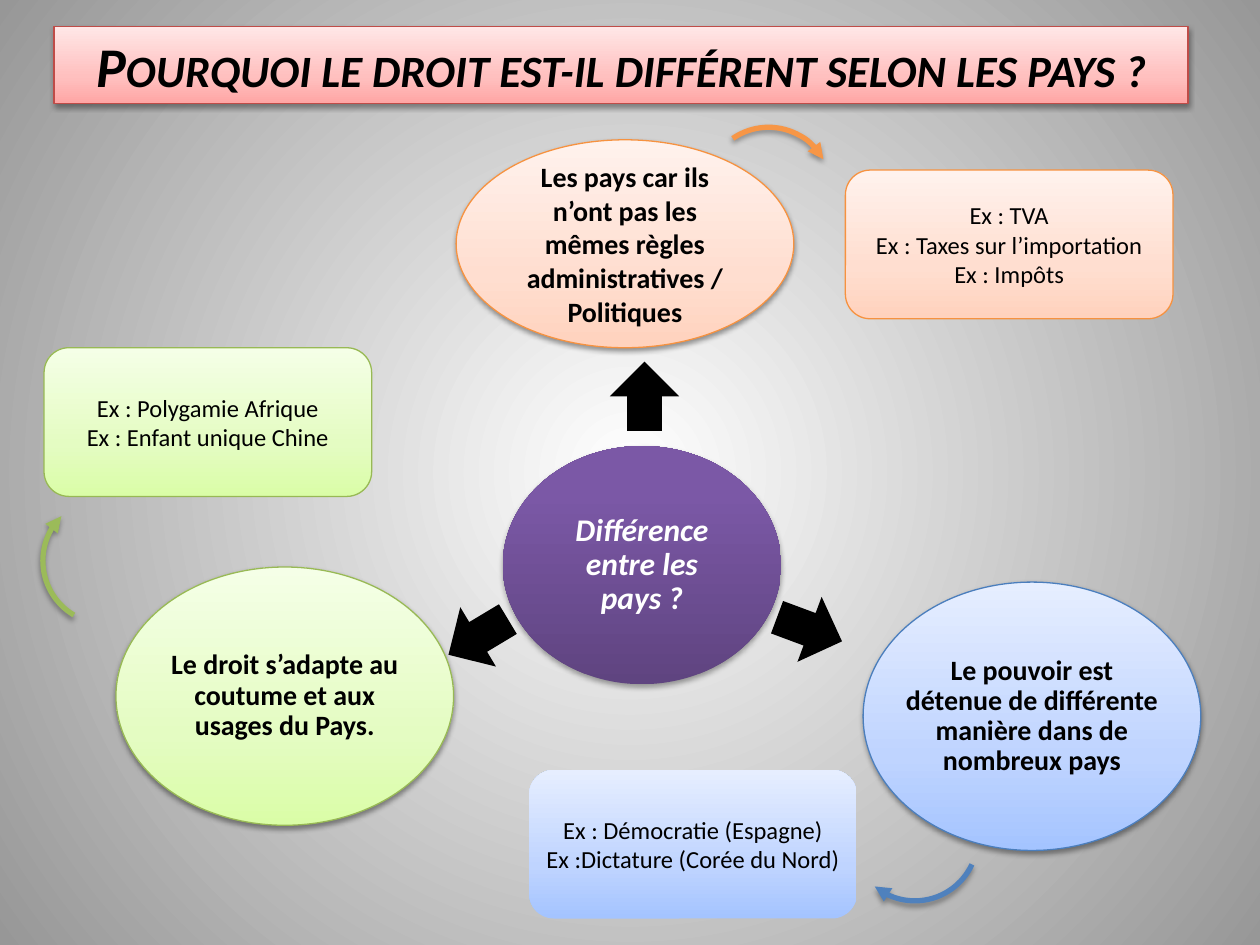
from lxml.etree import SubElement
from pptx import Presentation
from pptx.dml.color import RGBColor
from pptx.enum.shapes import MSO_SHAPE as Shape
from pptx.enum.text import MSO_ANCHOR, PP_ALIGN
from pptx.oxml.ns import qn
from pptx.util import Emu, Inches, Pt

BLACK = RGBColor(0x00, 0x00, 0x00)
WHITE = RGBColor(0xFF, 0xFF, 0xFF)
RED_LINE = RGBColor(0xBF, 0x4C, 0x48)
ORANGE_LINE = RGBColor(0xF6, 0x92, 0x40)
GREEN_LINE = RGBColor(0x98, 0xB9, 0x55)
BLUE_LINE = RGBColor(0x4B, 0x7E, 0xBC)
ORANGE = RGBColor(0xF7, 0x96, 0x46)
GREEN = RGBColor(0x9B, 0xBB, 0x59)
BLUE = RGBColor(0x4F, 0x81, 0xBD)

# Gradients: (position in percent, colour), from bottom to top
def pastel(*colors):
    return list(zip((0, 35, 100), map(RGBColor.from_string, colors)))


RED_FADE = pastel("FFA6A5", "FFC0BF", "FFE7E7")
ORANGE_FADE = pastel("FFD2BD", "FFDED0", "FFF2ED")
GREEN_FADE = pastel("DAFDA7", "E4FCC2", "F5FFE7")
BLUE_FADE = pastel("A4C4FF", "BFD4FF", "E6EEFF")
PURPLE_FADE = [(0, RGBColor(0x5F, 0x44, 0x80)), (80, RGBColor(0x7B, 0x58, 0xA6)),
               (100, RGBColor(0x7C, 0x57, 0xA8))]
BACKDROP = [(0, WHITE), (100, RGBColor(0x97, 0x97, 0x97))]

# Shadows: opacity in percent, distance in points
SOFT, STRONG = (38, 1.6), (35, 1.8)

TITLE = "Pourquoi le droit est-il différent selon les pays ?"
CENTRE = "Différence entre les pays ?"

# Reasons: text, box, fade, line, text margins from the box (x, y), line spacing
REASONS = [
    ("Le droit s’adapte au coutume et aux usages du Pays.",
     (0.92, 4.5, 2.68, 2.05), GREEN_FADE, GREEN_LINE, (0.3, 0.24), 0.9),
    ("Le pouvoir est détenue de différente manière dans de nombreux pays",
     (6.85, 4.62, 2.68, 2.13), BLUE_FADE, BLUE_LINE, (0.31, 0.3), 0.9),
    ("Les pays car ils n’ont pas les mêmes règles administratives / Politiques",
     (3.62, 1.11, 2.68, 1.65), ORANGE_FADE, ORANGE_LINE, (0.49, 0.29), 1.0),
]

# Examples: lines, left, top, fade, line
EXAMPLE_SIZE = (2.6, 1.18)
EXAMPLES = [
    (["Ex : Démocratie (Espagne)", "Ex :Dictature (Corée du Nord)"],
     4.2, 6.11, BLUE_FADE, None),
    (["Ex : Polygamie Afrique", "Ex : Enfant unique Chine"],
     0.35, 2.76, GREEN_FADE, GREEN_LINE),
    (["Ex : TVA", "Ex : Taxes sur l’importation", "Ex : Impôts"],
     6.71, 1.35, ORANGE_FADE, ORANGE_LINE),
]

# Arrows from the centre: left, top, rotation
ARROW = 0.55
ARROWS = [(3.52, 4.78, 239), (6.15, 4.72, 110.4), (4.84, 2.87, 0)]

# Curved arrows to the examples: left, top, rotation, start and end angle, colour
ARCS = [
    (5.6, 1.01, 326.1, 269.31, 4.4, ORANGE),
    (6.76, 6.15, 84.5, 300.47, 44.99, BLUE),
    (0.34, 3.95, 180, 300.47, 44.99, GREEN),
]

ELLIPSE_INSET = 0.1464  # share of the box between an ellipse and its text area


def set_stops(fill, stops):
    """Turn the fill into a gradient and return its XML element."""
    fill.gradient()
    gradient = fill.gradient_stops[0]._gs.getparent().getparent()
    stop_list = gradient.find(qn("a:gsLst"))
    for old in list(stop_list):
        stop_list.remove(old)
    for position, color in stops:
        stop = SubElement(stop_list, qn("a:gs"), pos=str(position * 1000))
        SubElement(stop, qn("a:srgbClr"), val=str(color))
    return gradient


def set_shadow(shape, opacity, distance):
    effects = shape._element.spPr.find(qn("a:effectLst"))
    shadow = SubElement(effects, qn("a:outerShdw"), blurRad=str(Pt(3.1)),
                        dist=str(Pt(distance)), dir="5400000", rotWithShape="0")
    color = SubElement(shadow, qn("a:srgbClr"), val=str(BLACK))
    SubElement(color, qn("a:alpha"), val=str(opacity * 1000))


def add(slide, kind, box, fade=None, line=None, width=0.75, shadow=None):
    shape = slide.shapes.add_shape(kind, *map(Inches, box))
    shape.shadow.inherit = False
    if fade:
        set_stops(shape.fill, fade)
        shape.fill.gradient_angle = 90
    if line is None:
        shape.line.fill.background()
    else:
        shape.line.color.rgb = line
        shape.line.width = Pt(width)
    if shadow:
        set_shadow(shape, *shadow)
    return shape


def write(shape, lines, size, color=BLACK, bold=False, italic=False,
          margins=(0, 0), spacing=1.0):
    frame = shape.text_frame
    frame.word_wrap = True
    frame.vertical_anchor = MSO_ANCHOR.MIDDLE
    frame.margin_left = frame.margin_right = Inches(margins[0])
    frame.margin_top = frame.margin_bottom = Inches(margins[1])
    frame.text = "\n".join(lines)
    for paragraph in frame.paragraphs:
        paragraph.alignment = PP_ALIGN.CENTER
        paragraph.line_spacing = spacing
        font = paragraph.font
        font.name, font.size = "Calibri", Pt(size)
        font.bold, font.italic = bold, italic
        font.color.rgb = color


def add_bubble(slide, text, box, fade, line, margins, spacing, shadow, **style):
    bubble = add(slide, Shape.OVAL, box, fade, line, shadow=shadow)
    inner = [margin - ELLIPSE_INSET * side for margin, side in zip(margins, box[2:])]
    write(bubble, [text], bold=True, margins=inner, spacing=spacing, **style)


def main():
    deck = Presentation()
    deck.slide_width, deck.slide_height = Inches(10), Inches(7.5)
    slide = deck.slides.add_slide(deck.slide_layouts[6])

    # Radial background
    gradient = set_stops(slide.background.fill, BACKDROP)
    gradient.remove(gradient.find(qn("a:lin")))
    radial = SubElement(gradient, qn("a:path"), {"path": "circle"})
    SubElement(radial, qn("a:fillToRect"), dict.fromkeys("ltrb", "50000"))

    # Title banner in small capitals
    banner = add(slide, Shape.RECTANGLE, (0.43, 0.21, 9, 0.61), RED_FADE, RED_LINE, shadow=SOFT)
    write(banner, [TITLE], 32, bold=True, italic=True, margins=(0.1, 0.05))
    banner.text_frame.paragraphs[0].runs[0].font._element.set("cap", "small")

    # Central question and reasons
    add_bubble(slide, CENTRE, (3.99, 3.54, 2.21, 1.89), PURPLE_FADE, None,
               (0.35, 0.3), 0.9, STRONG, size=18, color=WHITE, italic=True)
    for reason in REASONS:
        add_bubble(slide, *reason, SOFT, size=16)

    # Examples
    for lines, left, top, fade, line in EXAMPLES:
        card = add(slide, Shape.ROUNDED_RECTANGLE, (left, top, *EXAMPLE_SIZE), fade, line)
        write(card, lines, 14)

    # Block arrows
    for left, top, rotation in ARROWS:
        arrow = add(slide, Shape.UP_ARROW, (left, top, ARROW, ARROW))
        arrow.fill.solid()
        arrow.fill.fore_color.rgb = BLACK
        arrow.rotation = rotation

    # Curved arrows
    for left, top, rotation, start, end, color in ARCS:
        arc = add(slide, Shape.ARC, (left, top, 1, 1), line=color, width=3, shadow=STRONG)
        arc.fill.background()
        arc.rotation = rotation
        arc.adjustments[0], arc.adjustments[1] = start * 0.6, end * 0.6
        SubElement(arc.line._get_or_add_ln(), qn("a:tailEnd"), type="triangle")

    deck.save("out.pptx")


if __name__ == "__main__":
    main()
